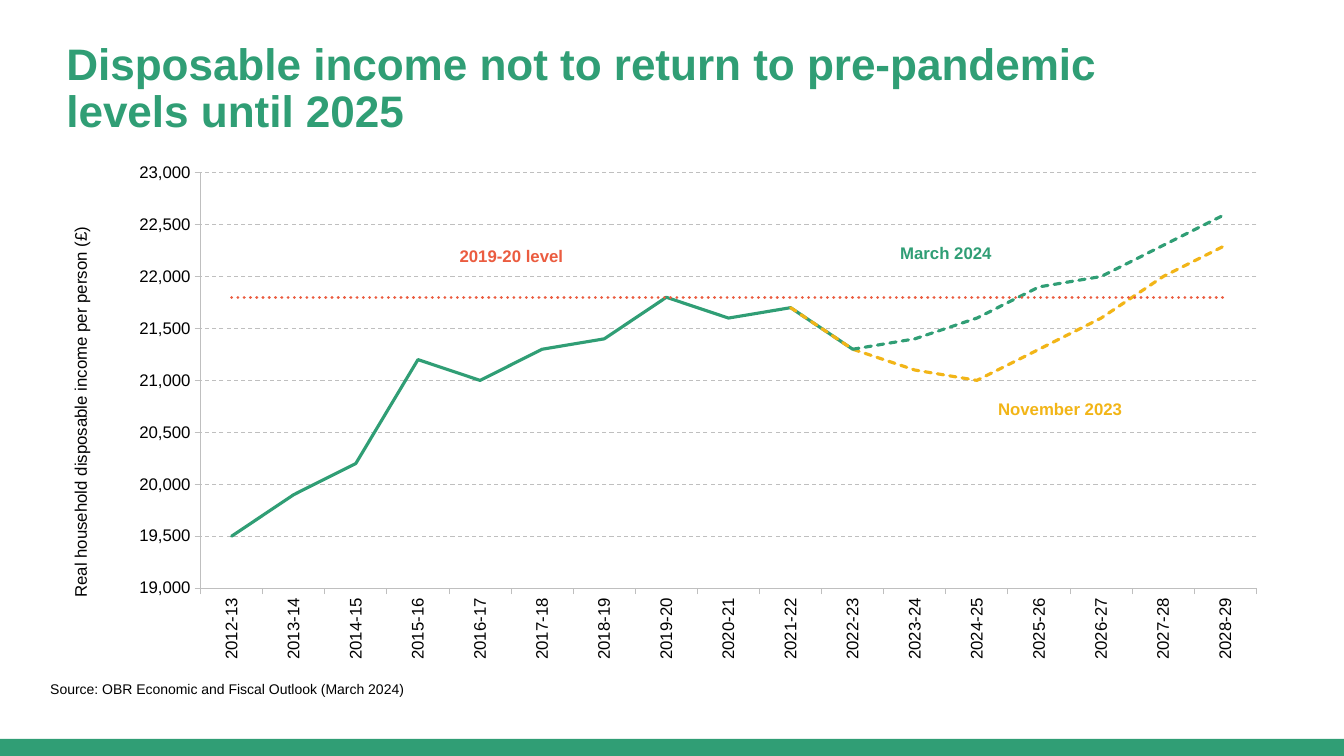
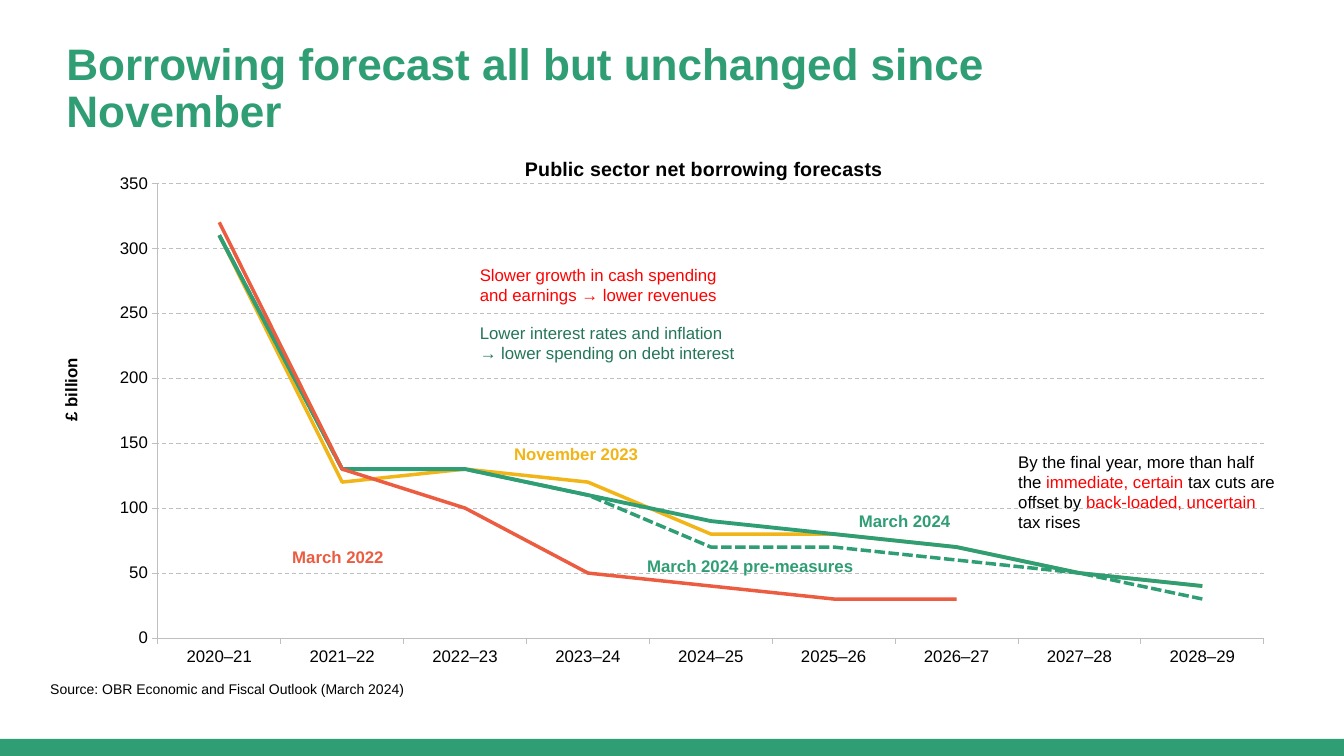
from lxml import etree
from pptx import Presentation
from pptx.chart.data import CategoryChartData
from pptx.dml.color import RGBColor
from pptx.enum.chart import XL_CHART_TYPE, XL_TICK_LABEL_POSITION as LabelPos, XL_TICK_MARK
from pptx.enum.dml import MSO_LINE
from pptx.enum.shapes import MSO_SHAPE
from pptx.enum.text import MSO_ANCHOR
from pptx.oxml.ns import qn
from pptx.util import Inches, Pt

FONT = "Arial"
GREEN, YELLOW, ORANGE = "309E75", "F2B517", "EB5C40"
DARK_GREEN, RED, BLACK, GREY = "247658", "FF0000", "000000", "BFBFBF"
# python-pptx writes these three as solid, sysDash and sysDot
SOLID, DASH, DOT = MSO_LINE.SOLID, MSO_LINE.SQUARE_DOT, MSO_LINE.ROUND_DOT
rgb = RGBColor.from_string


def add_text(s, text, box, size=12, color=BLACK, bold=False, anchor=MSO_ANCHOR.TOP, spacing=None):
    """Add a text box; text is a string or a list of (text, colour) runs."""
    tf = s.shapes.add_textbox(*map(Inches, box)).text_frame
    tf.word_wrap = True
    tf.vertical_anchor = anchor
    p = tf.paragraphs[0]
    if spacing:
        p.line_spacing = spacing
    for run_text, run_color in [(text, color)] if isinstance(text, str) else text:
        r = p.add_run()
        r.text = run_text
        r.font.name, r.font.size, r.font.bold = FONT, Pt(size), bold
        r.font.color.rgb = rgb(run_color)


def place(element, **fractions):
    """Give a plot area or chart title a manual layout in fractions of the chart."""
    for old in element.findall(qn("c:layout")):
        element.remove(old)
    layout = etree.Element(qn("c:layout"))
    manual = etree.SubElement(layout, qn("c:manualLayout"))
    is_plot = element.tag == qn("c:plotArea")
    if is_plot:
        etree.SubElement(manual, qn("c:layoutTarget")).set("val", "inner")
    for mode in ("xMode", "yMode"):
        etree.SubElement(manual, qn(f"c:{mode}")).set("val", "edge")
    for name, value in fractions.items():
        etree.SubElement(manual, qn(f"c:{name}")).set("val", str(value))
    element.insert(0 if is_plot else 1, layout)


SLIDES = [
    dict(
        title="Disposable income not to return to pre-pandemic levels until 2025",
        title_width=10.69,
        box=(0.41, 1.55, 12.15, 5.09),
        plot=dict(x=0.13, y=0.032, w=0.862, h=0.81),
        chart_title=None,
        axis_title="Real household disposable income per person (£)",
        axis_title_at=dict(x=0.021, y=0.132),
        axis_title_bold=False,
        scale=(19000, 23000, 500),
        rotated=True,
        cap="rnd",
        cats=[f"{year}-{(year + 1) % 100}" for year in range(2012, 2029)],
        series=[
            ("Outturn", GREEN, 2.25, SOLID,
             [19500, 19900, 20200, 21200, 21000, 21300, 21400, 21800, 21600, 21700, 21300]
             + [None] * 6),
            ("November 2023", YELLOW, 2.25, DASH,
             [None] * 9 + [21700, 21300, 21100, 21000, 21300, 21600, 22000, 22300]),
            ("March 2024", GREEN, 2.25, DASH,
             [None] * 10 + [21300, 21400, 21600, 21900, 22000, 22300, 22600]),
            ("2019-20 level", ORANGE, 2.25, DOT, [21800] * 17),
        ],
        labels=[
            ("November 2023", (9.8, 3.91, 1.95, 0.37), YELLOW),
            ("March 2024", (8.83, 2.36, 1.95, 0.37), GREEN),
            ("2019-20 level", (4.46, 2.39, 1.95, 0.37), ORANGE),
        ],
        notes=[],
    ),
    dict(
        title="Borrowing forecast all but unchanged since November",
        title_width=11.15,
        box=(0.56, 1.52, 11.98, 5.24),
        plot=dict(x=0.084, y=0.057, w=0.916, h=0.861),
        chart_title="Public sector net borrowing forecasts",
        axis_title="£ billion",
        axis_title_at=dict(x=0.001, y=0.382),
        axis_title_bold=True,
        scale=(0, 350, 50),
        rotated=False,
        cap="flat",
        cats=[f"{year}–{year % 100 + 1}" for year in range(2020, 2029)],
        series=[
            ("November 2023", YELLOW, 2.5, SOLID, [310, 120, 130, 120, 80, 80, 70, 50, 40]),
            ("March 2024 pre-measures", GREEN, 2.5, DASH,
             [310, 130, 130, 110, 70, 70, 60, 50, 30]),
            ("March 2024", GREEN, 2.75, SOLID, [310, 130, 130, 110, 90, 80, 70, 50, 40]),
            ("March 2022", ORANGE, 2.5, SOLID, [320, 130, 100, 50, 40, 30, 30, None, None]),
        ],
        labels=[
            ("March 2022", (2.8, 5.37, 1.55, 0.28), ORANGE),
            ("March 2024", (8.42, 5.02, 1.79, 0.48), GREEN),
            ("November 2023", (5, 4.35, 2.27, 0.33), YELLOW),
            ("March 2024 pre-measures", (6.32, 5.46, 2.41, 0.48), GREEN),
        ],
        notes=[
            ([("Slower growth in cash spending and earnings → lower revenues", RED)],
             (4.66, 2.58, 2.61, 0.58)),
            ([("Lower interest rates and inflation → lower spending on debt interest", DARK_GREEN)],
             (4.66, 3.15, 2.78, 0.55)),
            ([("By the final year, more than half the ", BLACK), ("immediate, certain ", RED),
              ("tax cuts are offset by ", BLACK), ("back-loaded, uncertain", RED),
              (" tax rises", BLACK)],
             (10, 4.43, 2.79, 0.78)),
        ],
    ),
]

prs = Presentation()
prs.slide_width, prs.slide_height = Inches(13.33), Inches(7.5)

for page in SLIDES:
    s = prs.slides.add_slide(prs.slide_layouts[6])
    band = s.shapes.add_shape(MSO_SHAPE.RECTANGLE, 0, Inches(7.33), prs.slide_width, Inches(0.17))
    band.shadow.inherit = False
    band.fill.solid()
    band.fill.fore_color.rgb = rgb(GREEN)
    band.line.fill.background()
    add_text(s, page["title"], (0.56, 0.37, page["title_width"], 0.63),
             size=31.5, color=GREEN, bold=True, spacing=0.9)

    data = CategoryChartData(number_format="#,##0")
    data.categories = page["cats"]
    for name, _, _, _, values in page["series"]:
        data.add_series(name, values)
    chart = s.shapes.add_chart(XL_CHART_TYPE.LINE, *map(Inches, page["box"]), data).chart
    chart.has_legend = False
    chart.font.name, chart.font.size = FONT, Pt(12)
    chart.font.color.rgb = rgb(BLACK)
    plot = chart.plots[0]
    plot.vary_by_categories = False
    for series, (_, color, width, dash, _) in zip(plot.series, page["series"]):
        series.smooth = False
        line = series.format.line
        line.color.rgb = rgb(color)
        line.width = Pt(width)
        line.dash_style = dash
    for ln in chart.element.xpath(".//c:ser/c:spPr/a:ln"):
        ln.set("cap", page["cap"])

    cat_axis, val_axis = chart.category_axis, chart.value_axis
    for axis in (cat_axis, val_axis):
        axis.major_tick_mark = XL_TICK_MARK.OUTSIDE
        axis.minor_tick_mark = XL_TICK_MARK.NONE
        axis.tick_labels.font.size = Pt(12)
    cat_axis.tick_label_position = LabelPos.LOW
    if page["rotated"]:
        chart.element.xpath(".//c:catAx/c:txPr/a:bodyPr")[0].set("rot", "-5400000")
    val_axis.minimum_scale, val_axis.maximum_scale, val_axis.major_unit = page["scale"]
    val_axis.tick_labels.number_format = "#,##0"
    val_axis.tick_labels.number_format_is_linked = False
    val_axis.has_major_gridlines = True
    grid_line = val_axis.major_gridlines.format.line
    for line in (cat_axis.format.line, val_axis.format.line, grid_line):
        line.color.rgb = rgb(GREY)
        line.width = Pt(0.75)
    grid_line.dash_style = MSO_LINE.DASH

    titles = [(val_axis.axis_title, page["axis_title"], 12, page["axis_title_bold"])]
    if page["chart_title"]:
        titles.append((chart.chart_title, page["chart_title"], 14, True))
    else:
        chart.has_title = False
    for title, text, size, bold in titles:
        title.text_frame.text = text
        font = title.text_frame.paragraphs[0].runs[0].font
        font.name, font.size, font.bold = FONT, Pt(size), bold
        font.color.rgb = rgb(BLACK)
    chart.element.xpath(".//c:valAx/c:title//a:bodyPr")[0].set("rot", "-5400000")
    place(chart.element.xpath(".//c:valAx/c:title")[0], **page["axis_title_at"])
    for title in chart.element.xpath("c:chart/c:title"):
        place(title, x=0.385, y=0)
    place(chart.element.xpath(".//c:plotArea")[0], **page["plot"])

    for text, box, color in page["labels"]:
        add_text(s, text, box, color=color, bold=True)
    for runs, box in page["notes"]:
        add_text(s, runs, box)
    add_text(s, "Source: OBR Economic and Fiscal Outlook (March 2024)", (0.4, 6.66, 8.77, 0.31),
             size=10, anchor=MSO_ANCHOR.BOTTOM)

prs.save("out.pptx")
